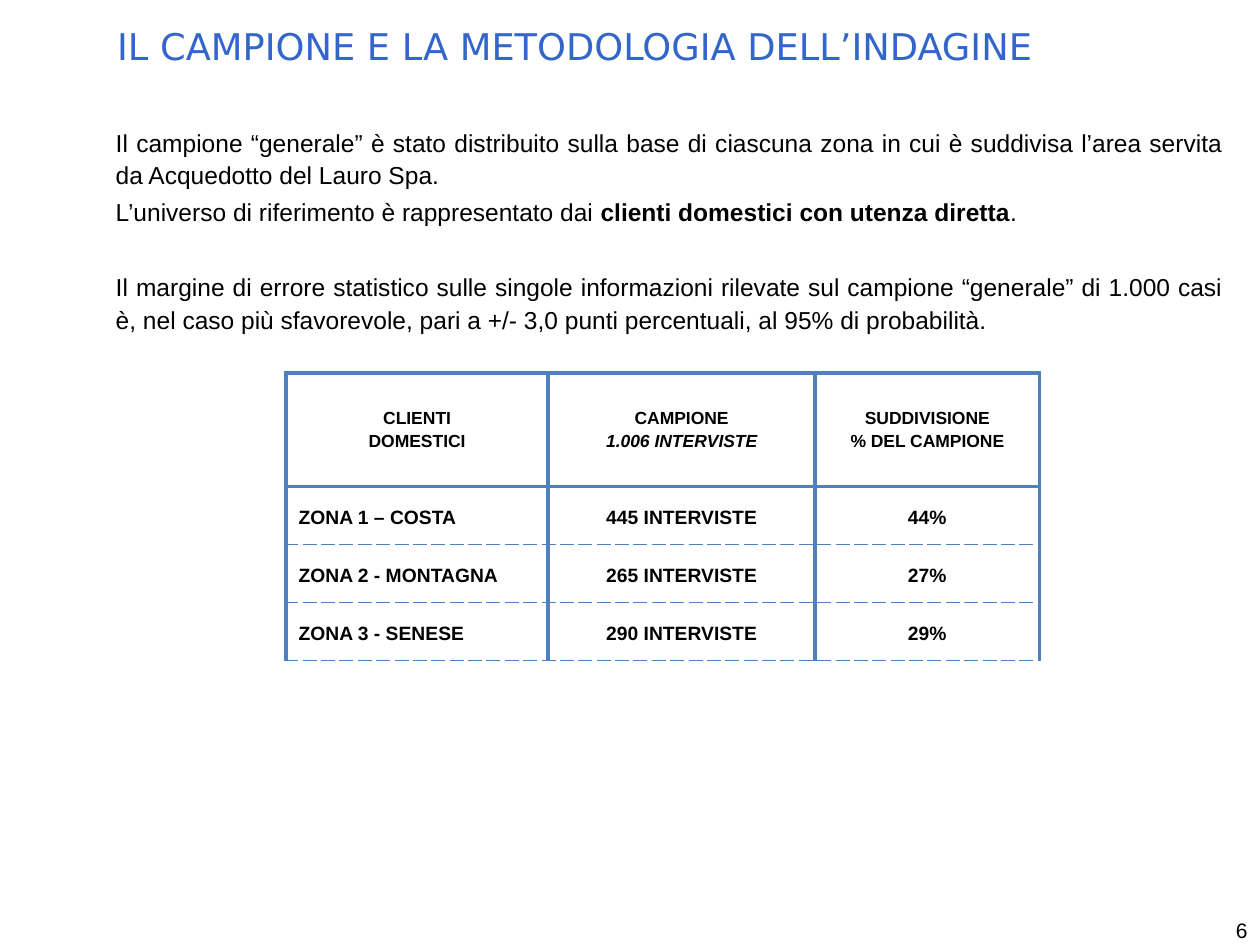
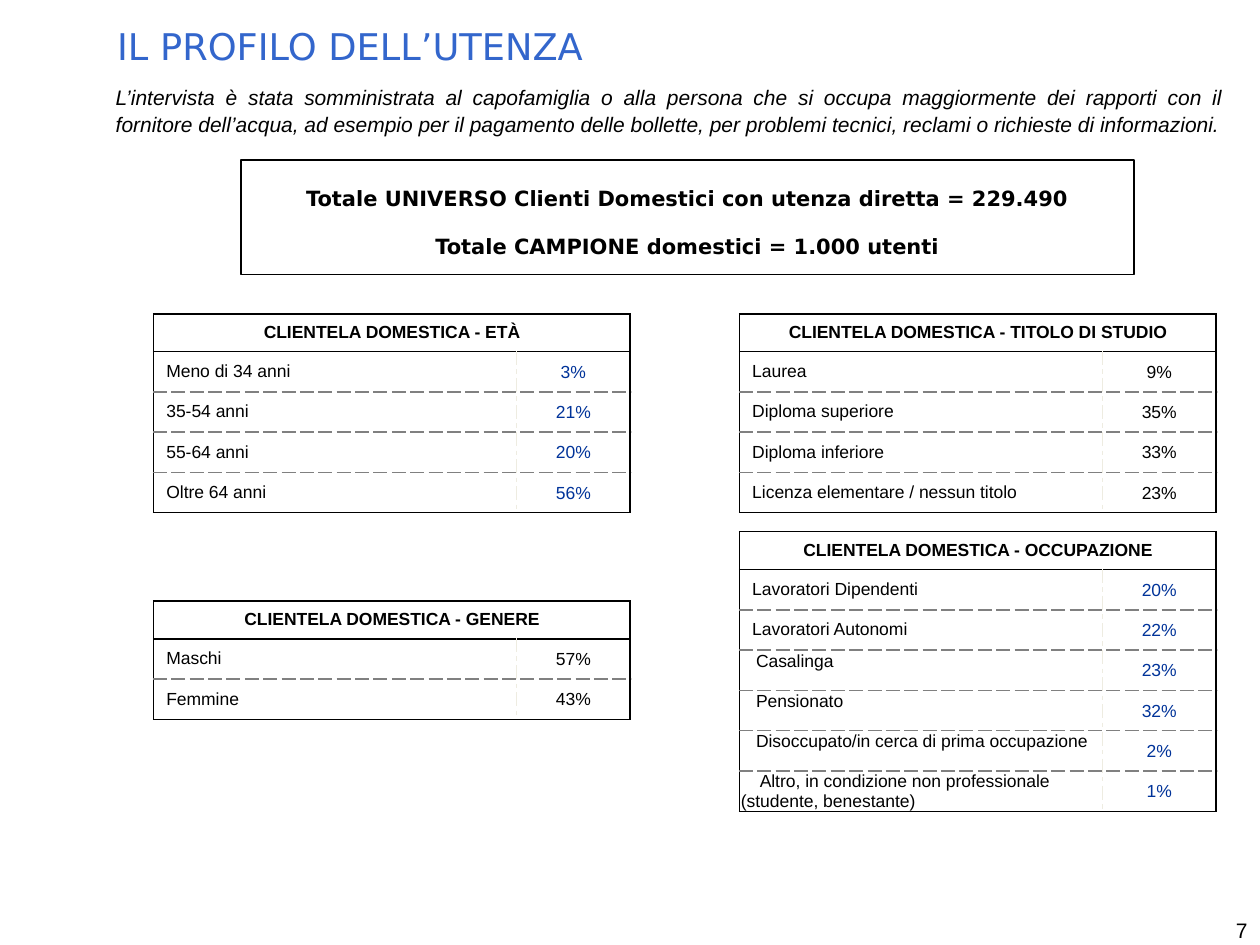
from lxml import etree
from pptx import Presentation
from pptx.dml.color import RGBColor
from pptx.enum.shapes import MSO_SHAPE
from pptx.enum.text import MSO_ANCHOR, MSO_AUTO_SIZE, PP_ALIGN
from pptx.oxml.ns import qn
from pptx.util import Inches, Pt

LEFT, CENTER, RIGHT, JUSTIFY = PP_ALIGN.LEFT, PP_ALIGN.CENTER, PP_ALIGN.RIGHT, PP_ALIGN.JUSTIFY
TOP, MIDDLE = MSO_ANCHOR.TOP, MSO_ANCHOR.MIDDLE
RECTANGLE, NO_AUTOFIT = MSO_SHAPE.RECTANGLE, MSO_AUTO_SIZE.NONE
TITLE_ONLY = 5

COLORS = {
    "title": "3366CC", "text": "000000", "value": "003399", "paper": "FFFFFF",
    "grid": "4F81BD", "dash": "808080", "divider": "EEECE1",
}
HEADING_FONT, BODY_FONT = "DejaVu Sans", "Arial"

STYLES = {
    "title": {"font": {"name": HEADING_FONT, "size": Pt(21)}, "color": "title",
              "paragraph": {"alignment": LEFT}},
    "body": {"font": {"name": BODY_FONT, "size": Pt(14)},
             "paragraph": {"alignment": JUSTIFY, "line_spacing": 1.1}, "before": 2.8},
    "note": {"font": {"name": BODY_FONT, "size": Pt(12), "italic": True},
             "paragraph": {"alignment": JUSTIFY, "line_spacing": 1.1}},
    "totals": {"font": {"name": HEADING_FONT, "size": Pt(12), "bold": True},
               "paragraph": {"alignment": CENTER, "line_spacing": 1.5}, "before": 6},
    "number": {"font": {"name": BODY_FONT, "size": Pt(12)},
               "paragraph": {"alignment": RIGHT}},
    "header": {"font": {"name": BODY_FONT, "size": Pt(10), "bold": True},
               "paragraph": {"alignment": CENTER}, "before": 2},
    "zone": {"font": {"name": BODY_FONT, "size": Pt(11), "bold": True},
             "paragraph": {"alignment": LEFT, "line_spacing": 1.2}},
    "zone value": {"font": {"name": BODY_FONT, "size": Pt(11), "bold": True},
                   "paragraph": {"alignment": CENTER, "line_spacing": 1.2}},
    "label": {"font": {"name": BODY_FONT, "size": Pt(10)},
              "paragraph": {"alignment": LEFT}},
    "black value": {"font": {"name": BODY_FONT, "size": Pt(10)},
                    "paragraph": {"alignment": CENTER}},
    "blue value": {"font": {"name": BODY_FONT, "size": Pt(10)}, "color": "value",
                   "paragraph": {"alignment": CENTER}},
}

# Borders are (colour, points, dash)
THICK_BLUE = ("grid", 2.25, "solid")
THIN_BLUE = ("grid", 0.75, "sysDash")
BLACK = ("text", 1, "solid")
GREY_DASH = ("dash", 1, "sysDash")
DIVIDER = ("divider", 1, "sysDashDot")

CELL_MARGINS = (0.1, 0.05, 0.1, 0.05)
ZONE_MARGINS = (0.1, 0.04, 0.1, 0.04)
TIGHT_MARGINS = (0.01, 0.01, 0.01, 0)


def set_values(target, values):
    for name, value in values.items():
        setattr(target, name, value)


def set_margins(target, margins):
    sides = ("margin_left", "margin_top", "margin_right", "margin_bottom")
    set_values(target, {side: Inches(margin) for side, margin in zip(sides, margins)})


def set_borders(cell, left, right, top, bottom):
    properties = cell._tc.get_or_add_tcPr()
    for index, (side, border) in enumerate(zip("LRTB", (left, right, top, bottom))):
        color, width, dash = border
        line = etree.Element(qn(f"a:ln{side}"), w=str(Pt(width)))
        fill = etree.SubElement(line, qn("a:solidFill"))
        etree.SubElement(fill, qn("a:srgbClr"), val=COLORS[color])
        etree.SubElement(line, qn("a:prstDash"), val=dash)
        properties.insert(index, line)


class Deck:
    def __init__(self):
        self.presentation = Presentation()
        self.presentation.slide_width = Inches(10)
        self.presentation.slide_height = Inches(7.5)
        self.slide = None

    def fill_text(self, frame, paragraphs, style_name):
        """Fill a frame; a paragraph is a string or a list of (text, font values)."""
        style = STYLES[style_name]
        for index, content in enumerate(paragraphs):
            paragraph = frame.add_paragraph() if index else frame.paragraphs[0]
            set_values(paragraph, style["paragraph"])
            if index:
                paragraph.space_before = Pt(style["before"])
            runs = [(content, {})] if isinstance(content, str) else content
            for text, changes in runs:
                run = paragraph.add_run()
                run.text = text
                set_values(run.font, {**style["font"], **changes})
                color = COLORS[style.get("color", "text")]
                run.font.color.rgb = RGBColor.from_string(color)

    def place_text(self, shape, paragraphs, style_name, anchor=TOP, margins=CELL_MARGINS):
        frame = shape.text_frame
        set_values(frame, {"word_wrap": True, "auto_size": NO_AUTOFIT,
                           "vertical_anchor": anchor})
        set_margins(frame, margins)
        self.fill_text(frame, paragraphs, style_name)
        return frame

    def new_slide(self, title, number):
        layout = self.presentation.slide_layouts[TITLE_ONLY]
        self.slide = self.presentation.slides.add_slide(layout)
        heading = self.slide.shapes.title
        set_values(heading, {"left": Inches(0.83), "top": Inches(0.14),
                             "width": Inches(8.97), "height": Inches(1.25)})
        self.place_text(heading, [title], "title")
        box = self.slide.shapes.add_textbox(
            Inches(8.62), Inches(7.27), Inches(1.38), Inches(0.23))
        self.place_text(box, [str(number)], "number", MIDDLE)

    def panel(self, left, top, width, height, paragraphs, style_name,
              fill=None, line=None, margins=CELL_MARGINS):
        shape = self.slide.shapes.add_shape(
            RECTANGLE, Inches(left), Inches(top), Inches(width), Inches(height))
        shape.shadow.inherit = False
        if fill:
            shape.fill.solid()
            shape.fill.fore_color.rgb = RGBColor.from_string(COLORS[fill])
        else:
            shape.fill.background()
        if line:
            shape.line.color.rgb = RGBColor.from_string(COLORS[line])
            shape.line.width = Pt(1)
        else:
            shape.line.fill.background()
        return self.place_text(shape, paragraphs, style_name, margins=margins)

    def table(self, left, top, widths, heights):
        frame = self.slide.shapes.add_table(
            len(heights), len(widths), Inches(left), Inches(top),
            Inches(sum(widths)), Inches(sum(heights)))
        table = frame.table
        set_values(table, {"first_row": False, "horz_banding": False})
        for column, width in zip(table.columns, widths):
            column.width = Inches(width)
        for row, height in zip(table.rows, heights):
            row.height = Inches(height)
        return table

    def cell(self, cell, paragraphs, style_name, borders,
             margins=CELL_MARGINS, anchor=MIDDLE):
        cell.fill.background()
        cell.vertical_anchor = anchor
        set_margins(cell, margins)
        set_borders(cell, *borders)
        self.fill_text(cell.text_frame, paragraphs, style_name)

    def zone_table(self, left, top, headers, rows):
        table = self.table(left, top, (2.08, 2.12, 1.78), [0.9] + [0.46] * len(rows))
        for column, header in enumerate(headers):
            self.cell(table.cell(0, column), header, "header", [THICK_BLUE] * 4)
        for row, values in enumerate(rows, 1):
            above = THICK_BLUE if row == 1 else THIN_BLUE
            for column, value in enumerate(values):
                self.cell(table.cell(row, column), [value],
                          "zone value" if column else "zone",
                          (THICK_BLUE, THICK_BLUE, above, THIN_BLUE), ZONE_MARGINS)

    def profile_table(self, left, top, topic, rows, value_style, indents=None):
        """Draw a share table; indents maps a row to its first-line indent."""
        indents = indents or {}
        table = self.table(left, top, (2.88, 0.9), [0.3] + [0.32] * len(rows))
        table.cell(0, 0).merge(table.cell(0, 1))
        self.cell(table.cell(0, 0), [f"CLIENTELA DOMESTICA - {topic}"],
                  "header", [BLACK] * 4)
        set_borders(table.cell(0, 1), *[BLACK] * 4)
        for row, (label, value) in enumerate(rows, 1):
            above = BLACK if row == 1 else GREY_DASH
            below = BLACK if row == len(rows) else GREY_DASH
            indented = row in indents
            label_cell = table.cell(row, 0)
            self.cell(label_cell, [label], "label", (BLACK, DIVIDER, above, below),
                      TIGHT_MARGINS if indented else CELL_MARGINS,
                      TOP if indented else MIDDLE)
            if indented:
                properties = label_cell.text_frame.paragraphs[0]._p.get_or_add_pPr()
                properties.set("indent", str(Inches(indents[row])))
            self.cell(table.cell(row, 1), [value], value_style,
                      (DIVIDER, BLACK, above, below), TIGHT_MARGINS)


def build_sample_slide(deck):
    deck.new_slide("IL CAMPIONE E LA METODOLOGIA DELL’INDAGINE", 6)
    frame = deck.panel(0.82, 0.94, 8.99, 1.88, [
        "Il campione “generale” è stato distribuito sulla base di ciascuna zona in cui "
        "è suddivisa l’area servita da Acquedotto del Lauro Spa.",
        [("L’universo di riferimento è rappresentato dai ", {}),
         ("clienti domestici con utenza diretta", {"bold": True}), (".", {})],
        "Il margine di errore statistico sulle singole informazioni rilevate sul campione "
        "“generale” di 1.000 casi è, nel caso più sfavorevole, pari a +/- 3,0 punti "
        "percentuali, al 95% di probabilità.",
    ], "body", fill="paper")
    frame.paragraphs[2].space_before = Pt(24.5)
    deck.zone_table(2.27, 2.96, [
        ["CLIENTI", "DOMESTICI"],
        ["CAMPIONE", [("1.006 INTERVISTE", {"italic": True})]],
        ["SUDDIVISIONE", "% DEL CAMPIONE"],
    ], [
        ("ZONA 1 – COSTA", "445 INTERVISTE", "44%"),
        ("ZONA 2 - MONTAGNA", "265 INTERVISTE", "27%"),
        ("ZONA 3 - SENESE", "290 INTERVISTE", "29%"),
    ])


def build_profile_slide(deck):
    deck.new_slide("IL PROFILO DELL’UTENZA", 7)
    deck.panel(0.82, 0.6, 8.99, 0.53, [
        "L’intervista è stata somministrata al capofamiglia o alla persona che si occupa "
        "maggiormente dei rapporti con il fornitore dell’acqua, ad esempio per il pagamento "
        "delle bollette, per problemi tecnici, reclami o richieste di informazioni.",
    ], "note", fill="paper")
    deck.panel(1.91, 1.27, 7.09, 0.91, [
        "Totale UNIVERSO Clienti Domestici con utenza diretta = 229.490",
        "Totale CAMPIONE domestici = 1.000 utenti",
    ], "totals", line="text", margins=[0.1] * 4)

    left_column, right_column, first_row = 1.22, 5.87, 2.49
    deck.profile_table(left_column, first_row, "ETÀ", [
        ("Meno di 34 anni", "3%"), ("35-54 anni", "21%"),
        ("55-64 anni", "20%"), ("Oltre 64 anni", "56%"),
    ], "blue value")
    deck.profile_table(right_column, first_row, "TITOLO DI STUDIO", [
        ("Laurea", "9%"), ("Diploma superiore", "35%"), ("Diploma inferiore", "33%"),
        ("Licenza elementare / nessun titolo", "23%"),
    ], "black value")
    deck.profile_table(left_column, 4.77, "GENERE", [
        ("Maschi", "57%"), ("Femmine", "43%"),
    ], "black value")
    deck.profile_table(right_column, 4.22, "OCCUPAZIONE", [
        ("Lavoratori Dipendenti", "20%"), ("Lavoratori Autonomi", "22%"),
        ("Casalinga", "23%"), ("Pensionato", "32%"),
        ("Disoccupato/in cerca di prima occupazione", "2%"),
        ("Altro, in condizione non professionale (studente, benestante)", "1%"),
    ], "blue value", indents={3: 0.12, 4: 0.12, 5: 0.12, 6: 0.15})


def main():
    deck = Deck()
    build_sample_slide(deck)
    build_profile_slide(deck)
    deck.presentation.save("out.pptx")


if __name__ == "__main__":
    main()
